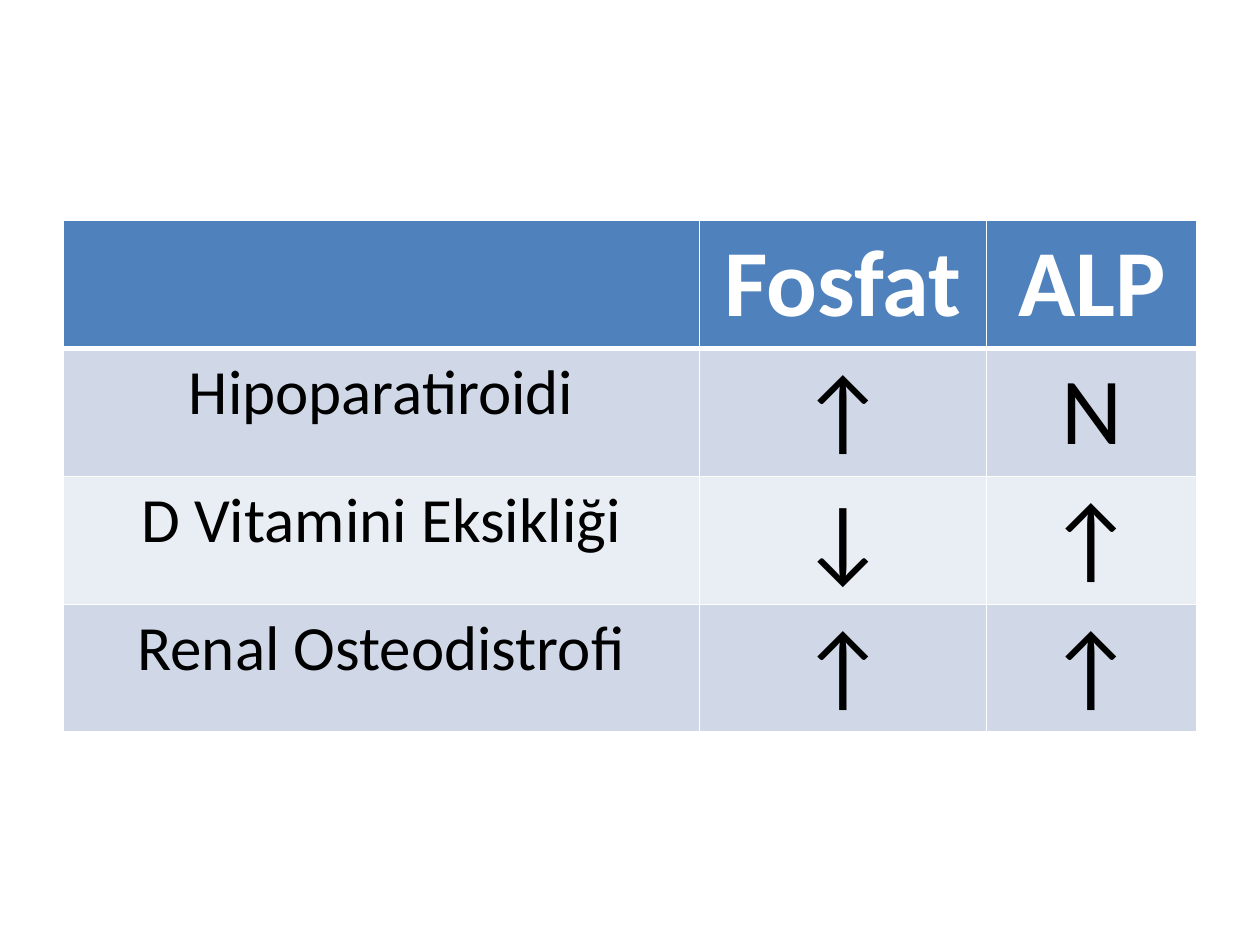
"""Build a slide with a table of phosphate and ALP findings by disease."""
from dataclasses import dataclass

from lxml.etree import SubElement as Sub
from pptx import Presentation as Deck
from pptx.dml.color import RGBColor as Rgb
from pptx.enum.text import PP_ALIGN as Align
from pptx.oxml.ns import qn
from pptx.util import Inches, Pt


@dataclass(frozen=True)
class Theme:
    font: str = "Calibri"
    head: str = "4F81BD"
    bands: tuple = ("D0D8E8", "E9EDF4")
    light: str = "FFFFFF"
    dark: str = "000000"
    big: int = 54
    small: int = 36
    thin: int = 1
    thick: int = 3


@dataclass(frozen=True)
class Row:
    name: str
    fosfat: str
    alp: str

    def texts(self) -> tuple:
        return self.name, self.fosfat, self.alp


THEME = Theme()
WIDTH, HEIGHT = Inches(10), Inches(7.5)
SHARES = (0.505, 0.228, 0.167)
ROWS = (
    Row("", "Fosfat", "ALP"),
    Row("Hipoparatiroidi", "↑", "N"),
    Row("D Vitamini Eksikliği", "↓", "↑"),
    Row("Renal Osteodistrofi", "↑", "↑"),
)


def edge(cell, row: int) -> None:
    props = cell._tc.get_or_add_tcPr()
    wide = {"T": row == 1, "B": row == 0}
    for side in "LRTB":
        width = THEME.thick if wide.get(side) else THEME.thin
        line = Sub(props, qn(f"a:ln{side}"), w=str(Pt(width)))
        Sub(Sub(line, qn("a:solidFill")), qn("a:srgbClr"), val=THEME.light)


def paint(cell, text: str, row: int, col: int) -> None:
    head = row == 0
    edge(cell, row)
    cell.fill.solid()
    fill = THEME.head if head else THEME.bands[(row - 1) % 2]
    cell.fill.fore_color.rgb = Rgb.from_string(fill)
    para = cell.text_frame.paragraphs[0]
    para.alignment = Align.CENTER
    if not text:
        return
    run = para.add_run()
    run.text = text
    size = THEME.big if head or col else THEME.small
    style = {"name": THEME.font, "size": Pt(size), "bold": head}
    for key, value in style.items():
        setattr(run.font, key, value)
    run.font.color.rgb = Rgb.from_string(THEME.light if head else THEME.dark)


def main() -> None:
    deck = Deck()
    deck.slide_width, deck.slide_height = WIDTH, HEIGHT
    slide = deck.slides.add_slide(deck.slide_layouts[6])
    table = slide.shapes.add_table(
        len(ROWS), len(SHARES), Inches(0.5), Inches(1.75), Inches(9), Inches(4)
    ).table
    for col, share in zip(table.columns, SHARES):
        col.width = int(WIDTH * share)
    for r, row in enumerate(ROWS):
        for c, text in enumerate(row.texts()):
            paint(table.cell(r, c), text, r, c)
    deck.save("out.pptx")


if __name__ == "__main__":
    main()
